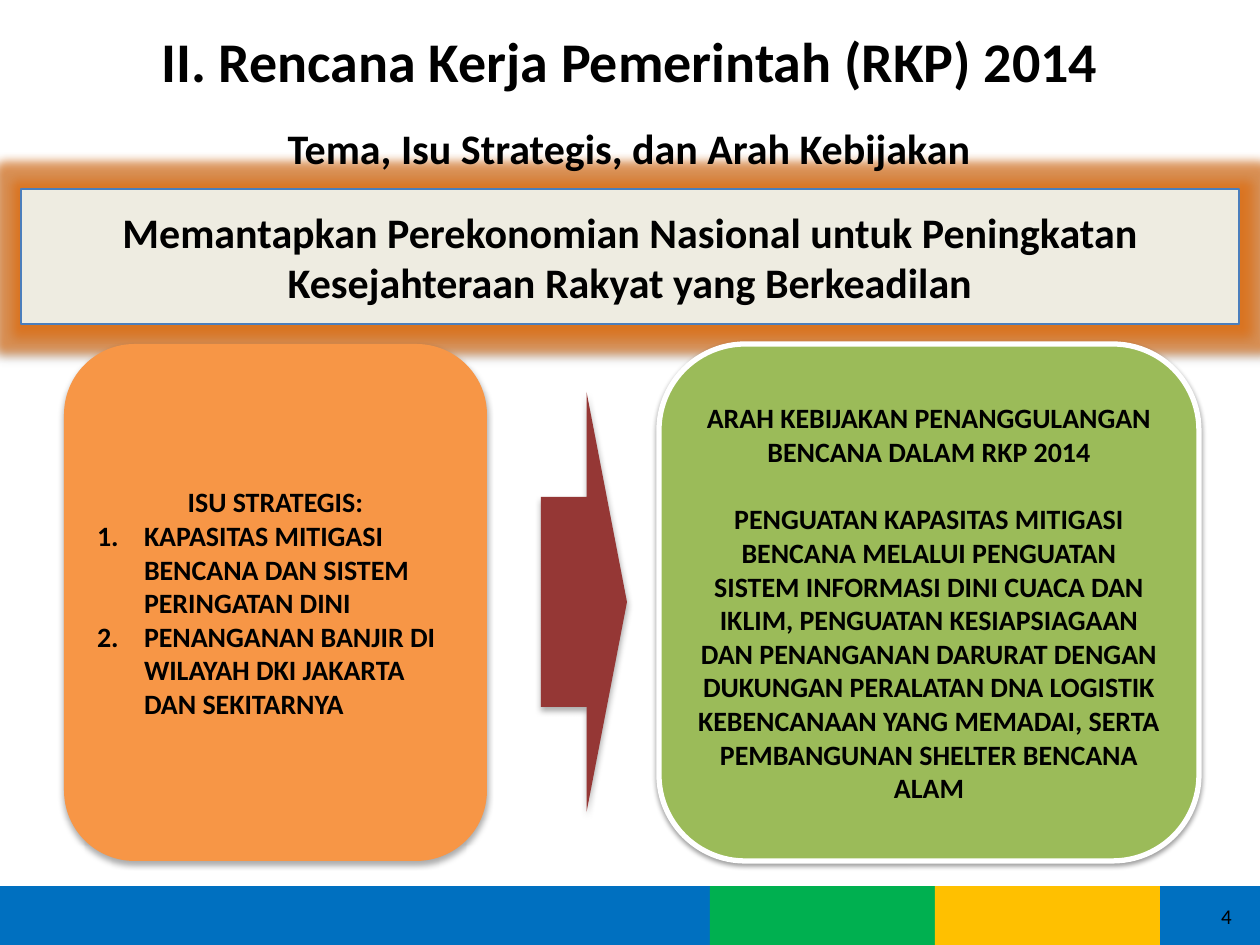
from dataclasses import dataclass

from lxml import etree
from pptx import Presentation
from pptx.dml.color import RGBColor
from pptx.enum.shapes import MSO_SHAPE
from pptx.enum.text import MSO_ANCHOR, PP_ALIGN
from pptx.oxml.ns import qn
from pptx.util import Emu, Pt

RECT = MSO_SHAPE.RECTANGLE
ROUND = MSO_SHAPE.ROUNDED_RECTANGLE
ARROW = MSO_SHAPE.RIGHT_ARROW
LEFT, CENTER, RIGHT = PP_ALIGN.LEFT, PP_ALIGN.CENTER, PP_ALIGN.RIGHT
MIDDLE, TOP = MSO_ANCHOR.MIDDLE, MSO_ANCHOR.TOP
FONT = "Calibri"
SCALE = 914400 / 126


@dataclass
class Box:
    x: int
    y: int
    w: int
    h: int


@dataclass
class Shade:
    alpha: int
    blur: float
    dist: float


@dataclass
class Para:
    text: str
    size: int
    bold: bool = True
    align: PP_ALIGN = CENTER
    hang: int = 0
    number: bool = False
    before: float = 0


SOFT = Shade(38, 3.1, 1.6)
DEEP = Shade(32, 3.5, 2.2)


def px(n: int) -> Emu:
    return Emu(round(n * SCALE))


def color(code: str) -> RGBColor:
    return RGBColor.from_string(code)


def place(shape, box: Box) -> None:
    shape.left, shape.top = px(box.x), px(box.y)
    shape.width, shape.height = px(box.w), px(box.h)


def tint(node, code: str, alpha: int) -> None:
    clr = etree.SubElement(node, qn("a:srgbClr"), val=code)
    etree.SubElement(clr, qn("a:alpha"), val=str(alpha * 1000))


def effect(shape, shade: Shade, glow: str = "") -> None:
    """Give the shape a downward shadow and, if asked, a coloured glow."""
    fx = shape._element.spPr.find(qn("a:effectLst"))
    if glow:
        node = etree.SubElement(fx, qn("a:glow"), rad=str(Pt(11)))
        tint(node, glow, 60)
    node = etree.SubElement(
        fx, qn("a:outerShdw"), blurRad=str(Pt(shade.blur)),
        dist=str(Pt(shade.dist)), dir="5400000", rotWithShape="0")
    tint(node, "000000", shade.alpha)


def write(frame, paras: list[Para], anchor: MSO_ANCHOR = MIDDLE) -> None:
    frame.word_wrap = True
    frame.vertical_anchor = anchor
    for i, item in enumerate(paras):
        para = frame.add_paragraph() if i else frame.paragraphs[0]
        para.alignment = item.align
        if item.before:
            para.space_before = Pt(item.before)
        props = para._p.get_or_add_pPr()
        if item.hang:
            props.set("marL", str(px(item.hang)))
            props.set("indent", str(-px(item.hang)))
        if item.number:
            etree.SubElement(props, qn("a:buFont"), typeface=FONT)
            etree.SubElement(props, qn("a:buAutoNum"), type="arabicPeriod")
        run = para.add_run()
        run.text = item.text
        font = run.font
        font.name, font.size, font.bold = FONT, Pt(item.size), item.bold
        font.color.rgb = color("000000")


def draw(slide, kind: MSO_SHAPE, box: Box, fill: str,
         line: str = "", width: float = 0):
    shape = slide.shapes.add_shape(
        kind, px(box.x), px(box.y), px(box.w), px(box.h))
    shape.shadow.inherit = False
    shape.fill.solid()
    shape.fill.fore_color.rgb = color(fill)
    if line:
        shape.line.color.rgb = color(line)
        shape.line.width = Pt(width)
    else:
        shape.line.fill.background()
    return shape


def label(slide, box: Box, para: Para, anchor: MSO_ANCHOR) -> None:
    text = slide.shapes.add_textbox(
        px(box.x), px(box.y), px(box.w), px(box.h))
    write(text.text_frame, [para], anchor)


def main() -> None:
    deck = Presentation()
    deck.slide_width, deck.slide_height = px(1260), px(945)
    slide = deck.slides.add_slide(deck.slide_layouts[5])

    title = slide.shapes.title
    place(title, Box(63, 20, 1134, 81))
    write(title.text_frame, [Para("II. Rencana Kerja Pemerintah (RKP) 2014", 32)])

    for x, w, fill in ((0, 1260, "0070C0"), (710, 225, "00B050"),
                       (935, 225, "FFC000")):
        draw(slide, RECT, Box(x, 886, w, 59), fill)
    label(slide, Box(950, 891, 294, 50),
          Para("4", 12, bold=False, align=RIGHT), MIDDLE)

    theme = draw(slide, RECT, Box(21, 189, 1218, 135), "EEECE1", "4B7EBC", 0.75)
    effect(theme, SOFT, glow="E46C0A")
    write(theme.text_frame, [Para(
        "Memantapkan Perekonomian Nasional untuk Peningkatan "
        "Kesejahteraan Rakyat yang Berkeadilan", 24)])
    label(slide, Box(137, 116, 984, 63),
          Para("Tema, Isu Strategis, dan Arah Kebijakan", 24), TOP)

    issues = draw(slide, ROUND, Box(64, 344, 423, 517), "F79646")
    effect(issues, DEEP)
    points = ("KAPASITAS MITIGASI BENCANA DAN SISTEM PERINGATAN DINI",
              "PENANGANAN BANJIR DI WILAYAH DKI JAKARTA DAN SEKITARNYA")
    write(issues.text_frame, [Para("ISU STRATEGIS:", 16, hang=47)] + [
        Para(text, 16, align=LEFT, hang=47, number=True) for text in points])

    arrow = draw(slide, ARROW, Box(541, 392, 86, 420), "953735")
    arrow.adjustments[0], arrow.adjustments[1] = 0.5, 0.47
    effect(arrow, DEEP)

    policy = draw(slide, ROUND, Box(659, 344, 540, 517), "9BBB59", "FFFFFF", 3)
    effect(policy, SOFT)
    write(policy.text_frame, [
        Para("ARAH KEBIJAKAN PENANGGULANGAN BENCANA DALAM RKP 2014", 16),
        Para("PENGUATAN KAPASITAS MITIGASI BENCANA MELALUI PENGUATAN "
             "SISTEM INFORMASI DINI CUACA DAN IKLIM, PENGUATAN "
             "KESIAPSIAGAAN DAN PENANGANAN DARURAT DENGAN DUKUNGAN "
             "PERALATAN DNA LOGISTIK KEBENCANAAN YANG MEMADAI, SERTA "
             "PEMBANGUNAN SHELTER BENCANA ALAM", 16, before=19.5)])

    deck.save("out.pptx")


if __name__ == "__main__":
    main()
